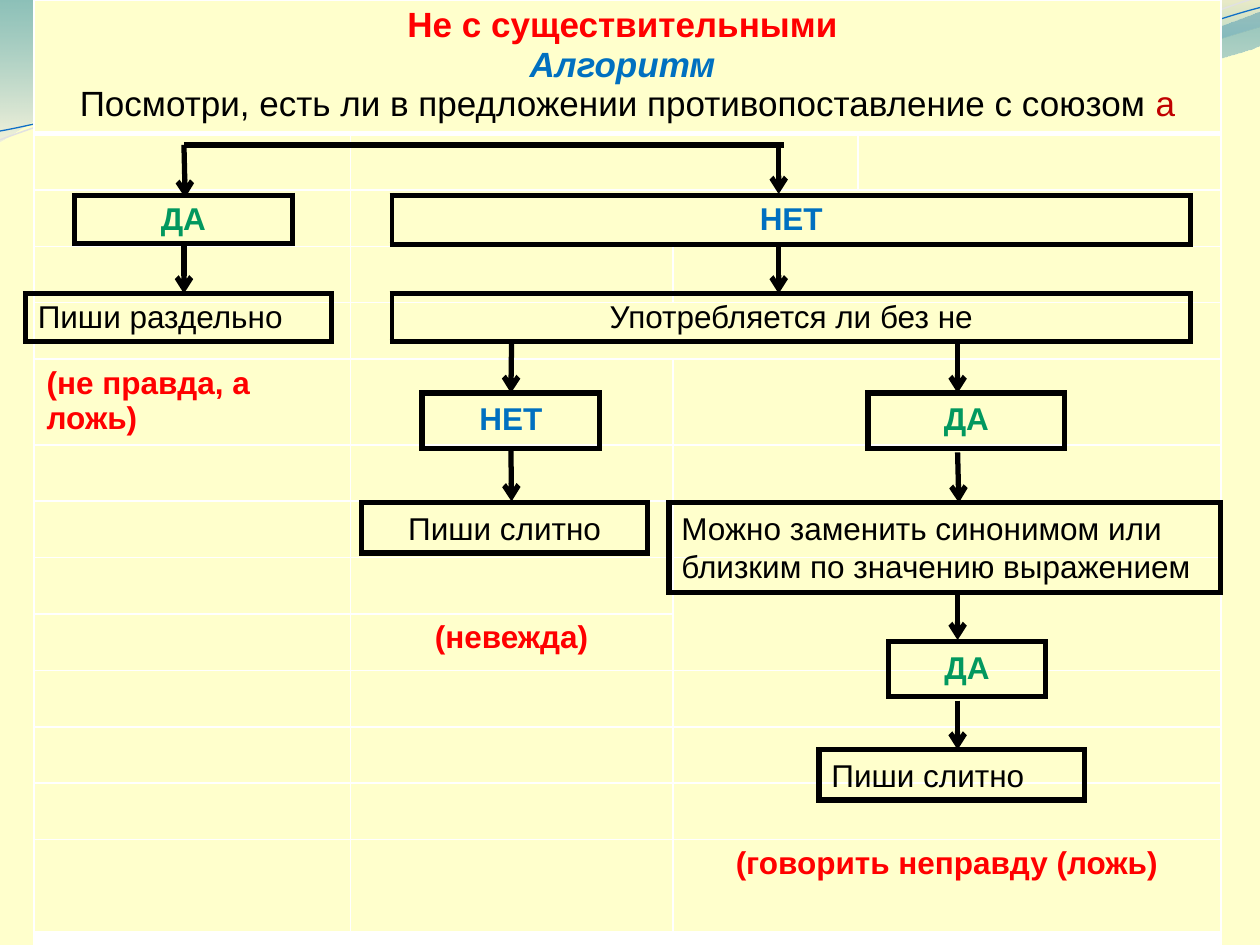
"""Build a flowchart slide on spelling the Russian particle "не" with nouns."""
import itertools
import pptx
import pptx.dml.color
import pptx.enum.dml
import pptx.enum.shapes
import pptx.enum.text
import pptx.oxml
import pptx.oxml.ns
import pptx.util

HUES = {"cream": "FFFFCC", "white": "FFFFFF", "black": "000000", "red": "FF0000",
        "dark": "C00000", "blue": "0070C0", "green": "02985F"}
FONT = "Arial"
WIDE, HIGH = pptx.util.Inches(10), pptx.util.Inches(7.5)
UNIT = WIDE / 100

TITLE = [
    [("Не с существительными ", dict(hue="red", bold=True))],
    [("Алгоритм ", dict(hue="blue", bold=True, slant=True))],
    [("Посмотри, есть ли в предложении противопоставление с союзом ", {}), ("а", dict(hue="dark"))],
]
COLS = [25.1, 25.6, 14.7, 28.8]
ROWS = [10.6] + [4.48] * 4 + [6.8] + [4.48] * 7 + [7.3, 4.2]
SPANS = [(0, 0, 0, 3), (1, 1, 1, 2), (2, 1, 2, 3), (4, 1, 4, 3), (8, 2, 9, 3)]
SPANS += [(row, 2, row, 3) for row in (3, 5, 6, 7, 10, 11, 12, 13, 14)]
NOTES = [(5, 0, "(не правда, а ложь)", "l"), (9, 1, "(невежда)", "c"),
         (13, 2, "(говорить неправду (ложь)", "c")]

YES, NO = dict(hue="green", bold=True, align="c"), dict(hue="blue", bold=True, align="c")
LEFT, MID = dict(align="l"), dict(align="c")
CELLS = [
    (5.9, 15.5, 17.3, 3.2, "ДА", YES),
    (31.1, 15.5, 63.4, 3.9, "НЕТ", NO),
    (2, 23.3, 24.3, 2.4, "Пиши раздельно", LEFT),
    (31.1, 23.3, 63.4, 1.4, "Употребляется ли без не", MID),
]
BOXES = {
    "no": (33.5, 31.2, 14.1, 4.4, ["НЕТ"], NO),
    "yes": (68.9, 31.2, 15.6, 4.4, ["ДА"], YES),
    "swap": (70.5, 50.9, 12.5, 4.4, ["ДА"], YES),
    "join": (28.7, 39.9, 22.7, 4, ["Пиши слитно"], MID),
    "near": (53.1, 39.9, 43.8, 7.1,
             ["Можно заменить синонимом или", "близким по значению выражением"], LEFT),
    "last": (65, 59.5, 21.1, 4, ["Пиши слитно"], LEFT),
}
LINKS = [
    (14.6, 11.5, 62.2, 11.5, False, None, None),
    (14.6, 11.5, 14.7, 15.7, True, None, None),
    (61.8, 11.5, 61.8, 15.4, True, None, None),
    (14.6, 19.4, 14.6, 23.3, True, None, None),
    (61.8, 19.4, 61.8, 23.3, True, None, None),
    (40.6, 27.3, 40.6, 31.2, True, None, "no"),
    (76, 27.3, 76, 31.2, True, None, None),
    (40.5, 35.8, 40.6, 39.8, True, "no", None),
    (76, 35.9, 76.1, 39.9, True, None, None),
    (76, 46.9, 76, 50.8, True, None, None),
    (76, 55.6, 76, 59.5, True, None, None),
]
WAVES = [
    ([(0, -.1), (44, -.1), [(47.6, 1.7), (66.4, 6.3), (75.8, 6.3)],
      [(85.3, 6.3), (95.8, 2.6), (100, .9)], (100.1, 3.6),
      [(98.3, 4.4), (87, 7.6), (74.6, 7.5)], [(62.2, 7.5), (38.2, 2.8), (25.7, 3.4)],
      [(12.9, 3.5), (4.6, 8.3), (-.1, 11.3)], (0, -.1)],
     [(0, "0074A1", 45), (1, "E7E7E7", 55)], None),
    ([(47.9, -.1), [(50.9, 1.1), (68.2, 6.2), (76.9, 6.5)],
      [(85.6, 6.9), (96.1, 3.2), (100, 2.1)], (100, 0), (47.9, -.1)],
     [(0, "BDBDBD", 30), (.8, "008BBF", 45)], None),
    ([(0, 11.1), [(4.8, 9.3), (15.8, 5.7), (27.7, 5.2)], [(39.5, 4.7), (59.3, 8.9), (71.3, 8)],
      [(83.3, 7.1), (93.8, 1.5), (99.8, -.2)]], None, ("E1E1E1", .85)),
    ([(0, 10.4), [(4.7, 9.6), (16.4, 6.1), (28.3, 5.6)], [(40.3, 5.1), (59.7, 8.3), (71.7, 7.5)],
      [(83.6, 6.7), (94.1, 2.1), (100, .6)]], None, ("0F6FC6", .75)),
]


def size(*nums):
    return [round(num * UNIT) for num in nums]


def tint(code):
    return pptx.dml.color.RGBColor.from_string(HUES.get(code, code))


def node(tag, **attrs):
    text = " ".join(f'{key}="{value}"' for key, value in attrs.items())
    return pptx.oxml.parse_xml(f'<a:{tag} {pptx.oxml.ns.nsdecls("a")} {text}/>')


def write(frame, lines, align="l", pts=18, **base):
    kinds = pptx.enum.text.PP_ALIGN
    for num, line in enumerate(lines):
        para = frame.add_paragraph() if num else frame.paragraphs[0]
        para.alignment = kinds.CENTER if align == "c" else kinds.LEFT
        for text, own in ([(line, {})] if isinstance(line, str) else line):
            look = {**base, **own}
            run = para.add_run()
            run.text = text
            run.font.name, run.font.size = FONT, pptx.util.Pt(pts)
            run.font.bold = look.get("bold", False)
            run.font.italic = look.get("slant", False)
            run.font.color.rgb = tint(look.get("hue", "black"))


def edge(cell, hue, **pts):
    props = cell._tc.get_or_add_tcPr()
    for spot, side in enumerate("LRTB"):
        line, fill = node("ln" + side, w=round(pts[side] * 12700)), node("solidFill")
        fill.append(node("srgbClr", val=HUES[hue]))
        line.append(fill)
        props.insert(spot, line)


def table(slide, left, top, cols, rows, tall):
    frame = slide.shapes.add_table(len(rows), len(cols), *size(left, top, sum(cols), tall))
    grid = frame.table
    grid.first_row = grid.horz_banding = False
    for col, wide in zip(grid.columns, size(*cols)):
        col.width = wide
    for row, high in zip(grid.rows, size(*rows)):
        row.height = high
    frame.height = size(tall)[0]
    return grid


def chart(slide):
    grid = table(slide, 2.7, 0, COLS, ROWS, 75.7)
    for row, col in itertools.product(range(len(ROWS)), range(len(COLS))):
        cell = grid.cell(row, col)
        cell.fill.solid()
        cell.fill.fore_color.rgb = tint("white" if row == len(ROWS) - 1 else "cream")
        edge(cell, "white", L=1, R=1, T=3 if row == 1 else 1, B=1 if row else 3)
    for top, left, low, right in SPANS:
        grid.cell(top, left).merge(grid.cell(low, right))
    write(grid.cell(0, 0).text_frame, TITLE, align="c", pts=20)
    for row, col, text, align in NOTES:
        write(grid.cell(row, col).text_frame, [text], align=align, hue="red", bold=True)


def wave(slide, steps, stops, line):
    dots = [dot for step in steps for dot in (step if isinstance(step, list) else [step])]
    pen = slide.shapes.build_freeform(*size(*dots[0]), scale=1.0)
    pen.add_line_segments([size(*dot) for dot in dots[1:]], close=bool(stops))
    shape = pen.convert_to_shape()
    parts = iter(list(shape._element.iter(pptx.oxml.ns.qn("a:lnTo"))))
    for step in steps[1:]:
        first = next(parts)
        if isinstance(step, list):
            curve = node("cubicBezTo")
            first.addprevious(curve)
            for part in (first, next(parts), next(parts)):
                curve.append(part[0])
                part.getparent().remove(part)
    shape.shadow.inherit = False
    if line:
        shape.fill.background()
        shape.line.color.rgb, shape.line.width = tint(line[0]), pptx.util.Pt(line[1])
        return
    shape.line.fill.background()
    shape.fill.gradient()
    shape.fill.gradient_angle = 270
    for stop, (place, code, clear) in zip(shape.fill.gradient_stops, stops):
        stop.position, stop.color.rgb = place, tint(code)
        for mark in shape._element.iter(pptx.oxml.ns.qn("a:srgbClr")):
            if mark.get("val") == code:
                mark.append(node("alpha", val=clear * 1000))


def box(slide, left, top, wide, tall, lines, look):
    kind = pptx.enum.shapes.MSO_SHAPE.RECTANGLE
    shape = slide.shapes.add_shape(kind, *size(left, top, wide, tall))
    shape.shadow.inherit = False
    shape.fill.background()
    shape.line.color.rgb, shape.line.width = tint("black"), pptx.util.Pt(3)
    shape.line._get_or_add_ln().append(node("miter", lim=800000))
    shape.text_frame.word_wrap = True
    shape.text_frame.vertical_anchor = pptx.enum.text.MSO_ANCHOR.TOP
    write(shape.text_frame, lines, **look)
    return shape


def link(slide, ends, arrow, start, stop):
    kind = pptx.enum.shapes.MSO_CONNECTOR.STRAIGHT
    line = slide.shapes.add_connector(kind, *size(*ends))
    if start:
        line.begin_connect(start, 2)
    if stop:
        line.end_connect(stop, 0)
    line.line.color.rgb, line.line.width = tint("black"), pptx.util.Pt(3)
    if arrow:
        line.line._get_or_add_ln().append(node("tailEnd", type="arrow"))
    line._element.spPr.append(node("effectLst"))


def main():
    deck = pptx.Presentation()
    deck.slide_width, deck.slide_height = WIDE, HIGH
    slide = deck.slides.add_slide(deck.slide_layouts[6])
    slide.background.fill.solid()
    slide.background.fill.fore_color.rgb = tint("cream")
    for item in WAVES:
        wave(slide, *item)
    chart(slide)
    for left, top, wide, tall, text, look in CELLS:
        cell = table(slide, left, top, [wide], [tall], 4).cell(0, 0)
        cell.fill.background()
        edge(cell, "black", L=3, R=3, T=3, B=3)
        write(cell.text_frame, [text], **look)
    made = {name: box(slide, *item) for name, item in BOXES.items()}
    for *ends, arrow, start, stop in LINKS:
        link(slide, ends, arrow, made.get(start), made.get(stop))
    deck.save("out.pptx")


if __name__ == "__main__":
    main()
